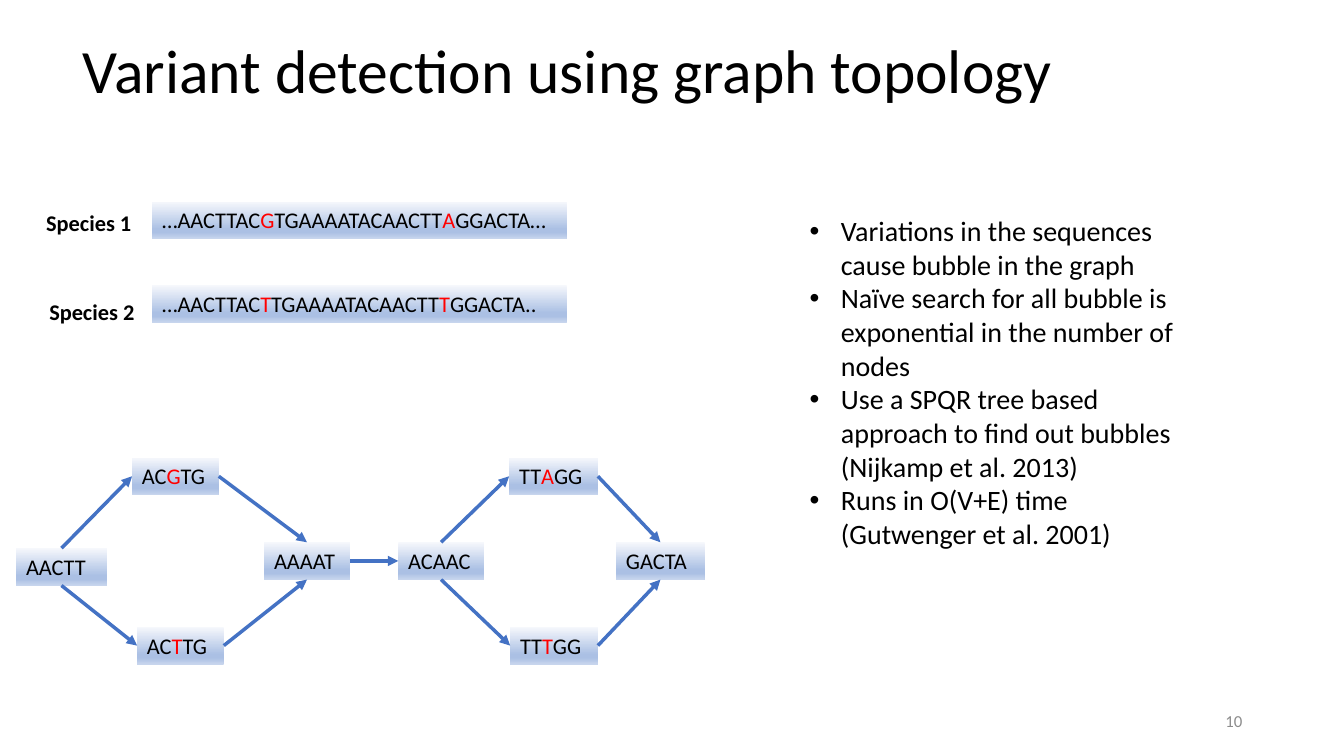
from copy import deepcopy
from dataclasses import dataclass

from lxml.etree import SubElement
from pptx import Presentation
from pptx.dml.color import RGBColor
from pptx.enum.shapes import MSO_CONNECTOR as Connector, MSO_SHAPE as Shape
from pptx.enum.text import MSO_ANCHOR as Anchor, MSO_AUTO_SIZE as AutoSize, PP_ALIGN as Align
from pptx.oxml.ns import qn
from pptx.util import Inches, Pt

# Content: bases between asterisks are variants
TITLE = "Variant detection using graph topology"
PAGE_NUMBER = "10"
POINTS = [
    "Variations in the sequences cause bubble in the graph",
    "Naïve search for all bubble is exponential in the number of nodes",
    "Use a SPQR tree based approach to find out bubbles\v(Nijkamp et al. 2013)",
    "Runs in O(V+E) time (Gutwenger et al. 2001)",
]
SPECIES = [  # name, name left, name top, sequence
    ("Species 1", 0.36, 2.02, "…AACTTAC*G*TGAAAATACAACTT*A*GGACTA…"),
    ("Species 2", 0.39, 2.91, "…AACTTAC*T*TGAAAATACAACTT*T*GGACTA.."),
]
NODES = {  # k-mer: left, graph row, width
    "AACTT": (0.16, 1.07, 0.9),
    "AC*G*TG": (1.31, 0, 0.86),
    "AC*T*TG": (1.36, 2, 0.86),
    "AAAAT": (2.62, 1, 0.85),
    "ACAAC": (3.95, 1, 0.85),
    "TT*A*GG": (5.05, 0, 0.88),
    "TT*T*GG": (5.06, 2, 0.87),
    "GACTA": (6.11, 1, 0.88),
}
TOP, LEFT, BOTTOM, RIGHT = range(4)
EDGES = [  # from node, side, to node, side
    ("AACTT", TOP, "AC*G*TG", LEFT),
    ("AACTT", BOTTOM, "AC*T*TG", LEFT),
    ("AC*T*TG", RIGHT, "AAAAT", BOTTOM),
    ("AC*G*TG", RIGHT, "AAAAT", TOP),
    ("AAAAT", RIGHT, "ACAAC", LEFT),
    ("ACAAC", TOP, "TT*A*GG", LEFT),
    ("ACAAC", BOTTOM, "TT*T*GG", LEFT),
    ("TT*A*GG", RIGHT, "GACTA", TOP),
    ("TT*T*GG", RIGHT, "GACTA", BOTTOM),
]


@dataclass(frozen=True)
class Theme:
    font: str = "Calibri"
    ink: str = "000000"
    variant: str = "FF0000"
    muted: str = "8C8C8C"
    arrow: str = "4472C4"
    box: tuple = ((0, "F6F8FC"), (0.74, "ABC0E4"), (0.83, "ABC0E4"), (1, "C7D5ED"))
    title_size: int = 44
    body_size: int = 20
    label_size: int = 16
    number_size: int = 12
    arrow_width: float = 2.5


THEME = Theme()

# Layout
SLIDE_SIZE = (13.33, 7.5)
BOX_HEIGHT = 0.37
SEQUENCE_LEFT, SEQUENCE_TOP, SEQUENCE_WIDTH, SEQUENCE_PITCH = 1.51, 2, 4.11, 0.83
GRAPH_TOP, GRAPH_PITCH = 4.54, 0.84
BULLET_INDENT = 0.31


def set_format(target, **values):
    for name, value in values.items():
        setattr(target, name, value)


def place(shape, left, top, width, height):
    set_format(shape, left=Inches(left), top=Inches(top),
               width=Inches(width), height=Inches(height))


def set_font(font, size, color=THEME.ink, bold=False):
    set_format(font, name=THEME.font, size=Pt(size), bold=bold)
    font.color.rgb = RGBColor.from_string(color)


def add_label(slide, text, area, size, color=THEME.ink, bold=False, align=Align.LEFT):
    label = slide.shapes.add_textbox(*map(Inches, area))
    set_format(label.text_frame, word_wrap=True, vertical_anchor=Anchor.MIDDLE)
    paragraph = label.text_frame.paragraphs[0]
    set_format(paragraph, text=text, alignment=align)
    set_font(paragraph.runs[0].font, size, color, bold)


def add_sequence_box(slide, sequence, left, top, width):
    box = slide.shapes.add_shape(
        Shape.RECTANGLE, *map(Inches, (left, top, width, BOX_HEIGHT)))
    box.shadow.inherit = False
    box.line.fill.background()

    # Four-stop gradient running from top to bottom
    box.fill.gradient()
    box.fill.gradient_angle = 270
    stop_list = next(box.element.iter(qn("a:gsLst")))
    stop_list.extend([deepcopy(stop) for stop in stop_list])
    for stop, (position, color) in zip(box.fill.gradient_stops, THEME.box):
        stop.position = position
        stop.color.rgb = RGBColor.from_string(color)

    set_format(box.text_frame, word_wrap=True, vertical_anchor=Anchor.TOP)
    paragraph = box.text_frame.paragraphs[0]
    paragraph.alignment = Align.LEFT
    for index, bases in enumerate(sequence.split("*")):
        run = paragraph.add_run()
        run.text = bases
        set_font(run.font, THEME.label_size, THEME.variant if index % 2 else THEME.ink)
    return box


def add_arrow(slide, source, source_side, target, target_side):
    arrow = slide.shapes.add_connector(Connector.STRAIGHT, 0, 0, 0, 0)
    arrow.begin_connect(source, source_side)
    arrow.end_connect(target, target_side)
    arrow.line.color.rgb = RGBColor.from_string(THEME.arrow)
    arrow.line.width = Pt(THEME.arrow_width)
    SubElement(arrow.line._get_or_add_ln(), qn("a:tailEnd"), type="triangle")
    SubElement(arrow.element.spPr, qn("a:effectLst"))


def fill_title(title):
    place(title, 0.72, 0, 11.5, 1.45)
    set_format(title.text_frame, text=TITLE, word_wrap=True,
               vertical_anchor=Anchor.MIDDLE, auto_size=AutoSize.NONE)
    paragraph = title.text_frame.paragraphs[0]
    set_format(paragraph, alignment=Align.LEFT, line_spacing=0.9)
    set_font(paragraph.runs[0].font, THEME.title_size)


def fill_points(body):
    place(body, 7.93, 2.07, 3.91, 3.47)
    set_format(body.text_frame, text="\n".join(POINTS), word_wrap=True,
               vertical_anchor=Anchor.TOP, auto_size=AutoSize.NONE)
    for paragraph in body.text_frame.paragraphs:
        set_format(paragraph, alignment=Align.LEFT, space_before=Pt(0))
        properties = paragraph._p.get_or_add_pPr()
        properties.set("marL", str(Inches(BULLET_INDENT)))
        properties.set("indent", str(-Inches(BULLET_INDENT)))
        SubElement(properties, qn("a:buFont"), typeface="Arial")
        SubElement(properties, qn("a:buChar"), char="•")
        for run in paragraph.runs:
            set_font(run.font, THEME.body_size)


def main():
    presentation = Presentation()
    presentation.slide_width, presentation.slide_height = map(Inches, SLIDE_SIZE)
    slide = presentation.slides.add_slide(presentation.slide_layouts[1])
    fill_title(slide.shapes.title)
    fill_points(slide.placeholders[1])
    add_label(slide, PAGE_NUMBER, (9.42, 6.95, 3, 0.4), THEME.number_size,
              THEME.muted, align=Align.RIGHT)

    # Species sequences
    for row, (name, left, top, sequence) in enumerate(SPECIES):
        add_sequence_box(slide, sequence, SEQUENCE_LEFT,
                         SEQUENCE_TOP + row * SEQUENCE_PITCH, SEQUENCE_WIDTH)
        add_label(slide, name, (left, top, 1.82, BOX_HEIGHT), THEME.label_size, bold=True)

    # Graph with its two bubbles
    boxes = {
        kmer: add_sequence_box(slide, kmer, left, GRAPH_TOP + row * GRAPH_PITCH, width)
        for kmer, (left, row, width) in NODES.items()
    }
    for source, source_side, target, target_side in EDGES:
        add_arrow(slide, boxes[source], source_side, boxes[target], target_side)

    presentation.save("out.pptx")


if __name__ == "__main__":
    main()
